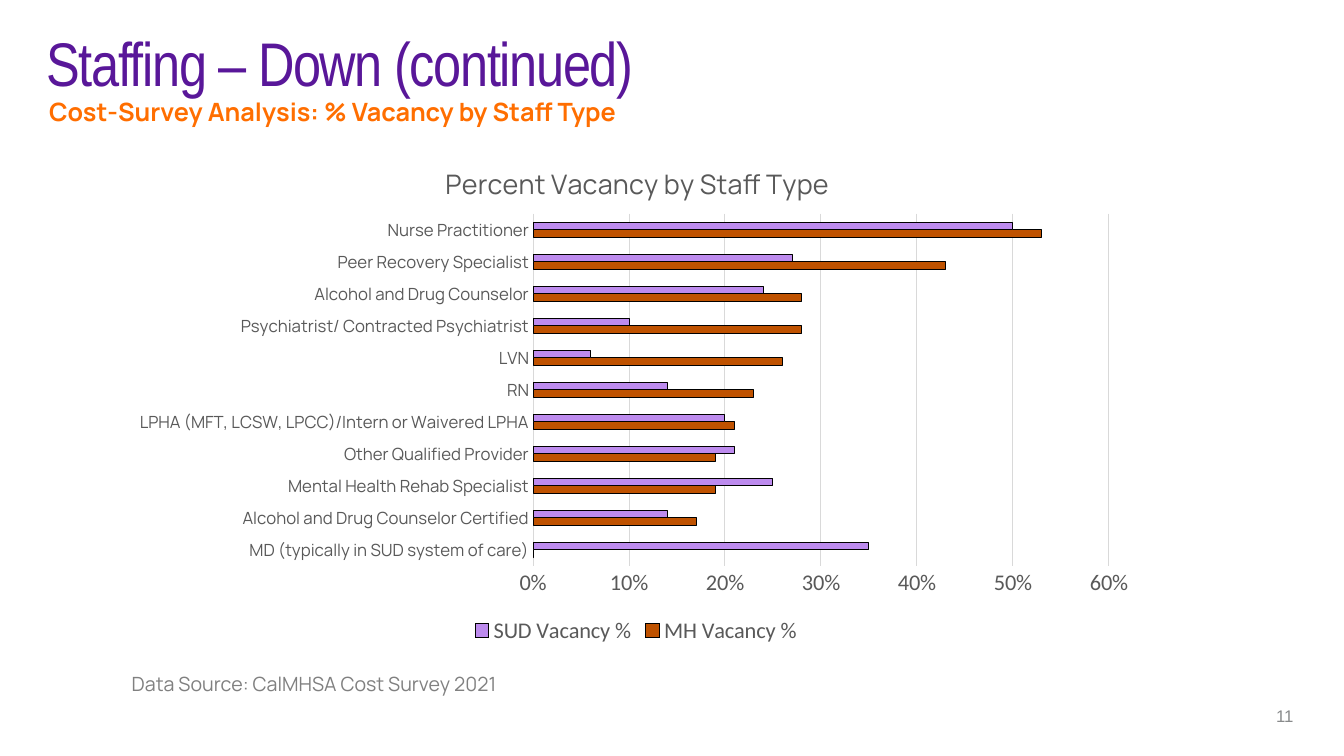
from dataclasses import dataclass

import pptx
import pptx.chart.data
import pptx.dml.color
import pptx.enum.chart
import pptx.enum.text
import pptx.oxml
import pptx.oxml.ns
import pptx.util

Pt = pptx.util.Pt
RGBColor = pptx.dml.color.RGBColor
Align = pptx.enum.text.PP_ALIGN

PURPLE = RGBColor(0x59, 0x17, 0x99)
ORANGE = RGBColor(0xFF, 0x6E, 0x00)
SOURCE_GRAY = RGBColor(0x80, 0x80, 0x80)
NUMBER_GRAY = RGBColor(0x88, 0x8A, 0x8B)
CHART_GRAY = RGBColor(0x59, 0x59, 0x59)
LINE_GRAY = RGBColor(0xD9, 0xD9, 0xD9)
BLACK = RGBColor(0, 0, 0)
RUST = RGBColor(0xBF, 0x52, 0x00)
LILAC = RGBColor(0xBD, 0x8B, 0xEE)


@dataclass
class Label:
    text: str
    left: float
    top: float
    width: float
    height: float
    size: float
    font: str
    color: RGBColor
    bold: bool = False
    align: Align = Align.LEFT


@dataclass
class VacancySeries:
    name: str
    color: RGBColor
    values: tuple[float, ...]


LABELS = [
    Label("Cost-Survey Analysis: % Vacancy by Staff Type",
          28, 65.5, 448, 29, 18, "Manrope", ORANGE, bold=True),
    Label("Data Source: CalMHSA Cost Survey 2021",
          87, 476.5, 536, 24.5, 14, "Manrope", SOURCE_GRAY),
    Label("11", 722, 500.5, 209, 21.5, 12, "Arial", NUMBER_GRAY, align=Align.RIGHT),
]

STAFF_TYPES = [
    "MD (typically in SUD system of care)",
    "Alcohol and Drug Counselor Certified",
    "Mental Health Rehab Specialist",
    "Other Qualified Provider",
    "LPHA (MFT, LCSW, LPCC)/Intern or Waivered LPHA",
    "RN",
    "LVN",
    "Psychiatrist/ Contracted Psychiatrist",
    "Alcohol and Drug Counselor",
    "Peer Recovery Specialist",
    "Nurse Practitioner",
]

SERIES = [
    VacancySeries("MH Vacancy %", RUST,
                  (0, 0.17, 0.19, 0.19, 0.21, 0.23, 0.26, 0.28, 0.28, 0.43, 0.53)),
    VacancySeries("SUD Vacancy %", LILAC,
                  (0.35, 0.14, 0.25, 0.21, 0.2, 0.14, 0.06, 0.1, 0.24, 0.27, 0.5)),
]


def style_font(font: pptx.text.text.Font, name: str, size: float,
               color: RGBColor, bold: bool = False) -> None:
    font.name = name
    font.size = Pt(size)
    font.bold = bold
    font.color.rgb = color


def style_line(line: pptx.dml.line.LineFormat, color: RGBColor) -> None:
    line.color.rgb = color
    line.width = Pt(0.75)


def add_label(page: pptx.slide.Slide, label: Label) -> None:
    box = page.shapes.add_textbox(Pt(label.left), Pt(label.top),
                                  Pt(label.width), Pt(label.height))
    box.text_frame.word_wrap = True
    para = box.text_frame.paragraphs[0]
    para.text = label.text
    para.alignment = label.align
    style_font(para.font, label.font, label.size, label.color, label.bold)


def manual_layout(inner: bool = False, **fractions: float) -> pptx.oxml.xmlchemy.BaseOxmlElement:
    target = '<c:layoutTarget val="inner"/>' if inner else ""
    modes = "".join(f'<c:{side}Mode val="edge"/>' for side in "xy")
    sizes = "".join(f'<c:{key} val="{value}"/>' for key, value in fractions.items())
    return pptx.oxml.parse_xml(
        f'<c:layout {pptx.oxml.ns.nsdecls("c")}><c:manualLayout>'
        f"{target}{modes}{sizes}</c:manualLayout></c:layout>")


def format_title(page: pptx.slide.Slide) -> None:
    title = page.shapes.title
    title.left, title.top, title.width, title.height = Pt(26), Pt(7), Pt(828), Pt(81)
    frame = title.text_frame
    frame.auto_size = pptx.enum.text.MSO_AUTO_SIZE.NONE
    frame.vertical_anchor = pptx.enum.text.MSO_ANCHOR.MIDDLE
    para = frame.paragraphs[0]
    para.text = "Staffing – Down (continued)"
    para.alignment = Align.LEFT
    para.line_spacing = 0.9
    style_font(para.font, "Arial Narrow", 44, PURPLE)
    para.runs[0]._r.get_or_add_rPr().set("spc", "-100")


def add_vacancy_chart(page: pptx.slide.Slide) -> None:
    data = pptx.chart.data.CategoryChartData(number_format="0%")
    data.categories = STAFF_TYPES
    for series in SERIES:
        data.add_series(series.name, series.values)
    chart = page.shapes.add_chart(pptx.enum.chart.XL_CHART_TYPE.BAR_CLUSTERED,
                                  Pt(87), Pt(93.5), Pt(734.5), Pt(370), data).chart
    style_font(chart.font, "Calibri", 16, CHART_GRAY)

    # Chart title
    chart.has_title = True
    para = chart.chart_title.text_frame.paragraphs[0]
    para.text = "Percent Vacancy by Staff Type"
    style_font(para.font, "Manrope", 19.2, CHART_GRAY)
    title_xml = chart.chart_title._element
    for layout in title_xml.findall(pptx.oxml.ns.qn("c:layout")):
        title_xml.remove(layout)
    title_xml.find(pptx.oxml.ns.qn("c:tx")).addnext(manual_layout(x=0.31, y=0.05))

    # Plot area and bars
    plot = chart.plots[0]
    plot.gap_width = 219
    plot.overlap = 0
    plot.vary_by_categories = False
    for bars, series in zip(plot.series, SERIES):
        bars.format.fill.solid()
        bars.format.fill.fore_color.rgb = series.color
        style_line(bars.format.line, BLACK)
    plot_area = chart._chartSpace.chart.plotArea
    for layout in plot_area.findall(pptx.oxml.ns.qn("c:layout")):
        plot_area.remove(layout)
    plot_area.insert(0, manual_layout(inner=True, x=0.4, y=0.16, w=0.56, h=0.68))

    # Axes
    no_tick = pptx.enum.chart.XL_TICK_MARK.NONE
    for axis in (chart.category_axis, chart.value_axis):
        axis.major_tick_mark = axis.minor_tick_mark = no_tick
    chart.category_axis.has_major_gridlines = False
    style_font(chart.category_axis.tick_labels.font, "Manrope", 12, CHART_GRAY)
    style_line(chart.category_axis.format.line, LINE_GRAY)
    percent = chart.value_axis
    percent.minimum_scale, percent.maximum_scale, percent.major_unit = 0, 0.6, 0.1
    percent.has_major_gridlines = True
    style_line(percent.major_gridlines.format.line, LINE_GRAY)
    percent.format.line.fill.background()
    percent.tick_labels.number_format = "0%"
    percent.tick_labels.number_format_is_linked = False
    style_font(percent.tick_labels.font, "Calibri", 16, CHART_GRAY)

    # Legend
    chart.has_legend = True
    chart.legend.position = pptx.enum.chart.XL_LEGEND_POSITION.BOTTOM
    chart.legend.include_in_layout = False
    style_font(chart.legend.font, "Calibri", 16, CHART_GRAY)


def main() -> None:
    deck = pptx.Presentation()
    deck.slide_width, deck.slide_height = Pt(960), Pt(540)
    page = deck.slides.add_slide(deck.slide_layouts.get_by_name("Title Only"))
    format_title(page)
    add_vacancy_chart(page)
    for label in LABELS:
        add_label(page, label)
    deck.save("out.pptx")


if __name__ == "__main__":
    main()
